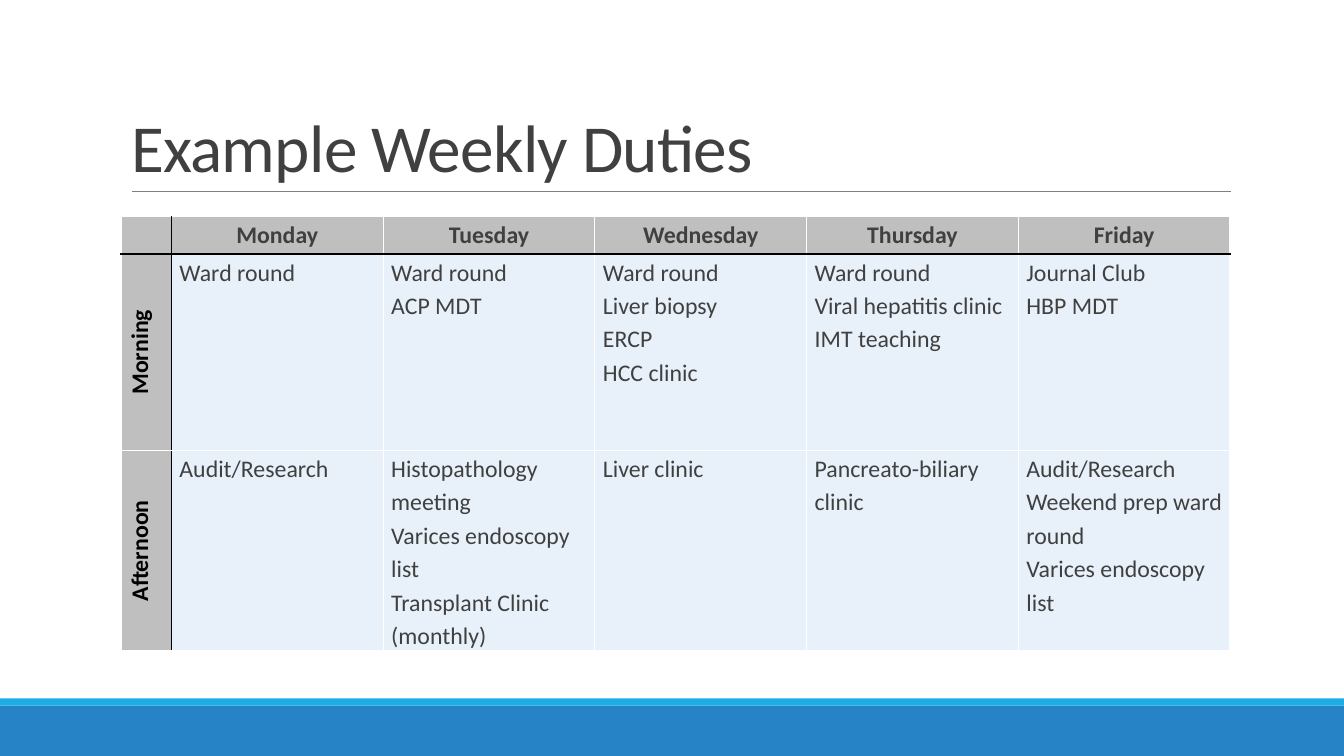
from lxml.etree import SubElement
from pptx import Presentation
from pptx.dml.color import RGBColor
from pptx.enum.shapes import MSO_CONNECTOR, MSO_SHAPE
from pptx.enum.text import MSO_ANCHOR, MSO_AUTO_SIZE, PP_ALIGN
from pptx.oxml.ns import qn
from pptx.util import Inches, Pt

SLIDE_WIDTH, SLIDE_HEIGHT = Inches(13.33), Inches(7.5)
MARGIN = Inches(1.2)
CONTENT_WIDTH = Inches(11)
LABEL_WIDTH, DAY_WIDTH = Inches(0.5), Inches(2.1)
HEADER_HEIGHT, SESSION_HEIGHT = Inches(0.37), Inches(1.95)
FOOTER_TOP, STRIPE_HEIGHT = Inches(7), Inches(0.07)

FONT = "Calibri"
BLACK = RGBColor(0x00, 0x00, 0x00)
WHITE = RGBColor(0xFF, 0xFF, 0xFF)
DARK_GREY = RGBColor(0x40, 0x40, 0x40)
RULE_GREY = RGBColor(0x80, 0x80, 0x80)
HEADER_GREY = RGBColor(0xBF, 0xBF, 0xBF)
PALE_BLUE = RGBColor(0xE8, 0xF1, 0xFA)
FOOTER_BLUE = RGBColor(0x26, 0x83, 0xC6)
STRIPE_BLUE = RGBColor(0x1C, 0xAD, 0xE4)

DAYS = ["Monday", "Tuesday", "Wednesday", "Thursday", "Friday"]
DUTIES = {
    "Morning": [
        ["Ward round"],
        ["Ward round", "ACP MDT"],
        ["Ward round", "Liver biopsy", "ERCP", "HCC clinic"],
        ["Ward round", "Viral hepatitis clinic", "IMT teaching"],
        ["Journal Club", "HBP MDT"],
    ],
    "Afternoon": [
        ["Audit/Research"],
        ["Histopathology meeting", "Varices endoscopy list",
         "Transplant Clinic (monthly)"],
        ["Liver clinic"],
        ["Pancreato-biliary clinic"],
        ["Audit/Research", "Weekend prep ward round",
         "Varices endoscopy list"],
    ],
}


def add_band(slide, top, height, color):
    band = slide.shapes.add_shape(MSO_SHAPE.RECTANGLE, 0, top, SLIDE_WIDTH, height)
    band.shadow.inherit = False
    band.fill.solid()
    band.fill.fore_color.rgb = color
    band.line.fill.background()


def add_title_rule(slide):
    top = Inches(1.9)
    rule = slide.shapes.add_connector(
        MSO_CONNECTOR.STRAIGHT, Inches(1.31), top, Inches(12.21), top)
    rule.line.color.rgb = RULE_GREY
    rule.line.width = Pt(0.5)
    SubElement(rule._element.spPr, qn("a:effectLst"))


def set_title(slide, text):
    title = slide.shapes.title
    title.left, title.top = MARGIN, Inches(0.31)
    title.width, title.height = CONTENT_WIDTH, Inches(1.59)
    frame = title.text_frame
    frame.text = text
    frame.word_wrap = True
    frame.auto_size = MSO_AUTO_SIZE.NONE
    frame.vertical_anchor = MSO_ANCHOR.BOTTOM
    para = frame.paragraphs[0]
    para.alignment = PP_ALIGN.LEFT
    para.line_spacing = 0.85
    para.font.name, para.font.size = FONT, Pt(48)
    para.font.color.rgb = DARK_GREY
    para.runs[0]._r.get_or_add_rPr().set("spc", "-50")


def set_borders(cell, row, column):
    """Black lines set off the header row and label column; the rest are white."""
    is_black = {"lnL": column == 1, "lnR": column == 0,
                "lnT": row == 1, "lnB": row == 0}
    properties = cell._tc.get_or_add_tcPr()
    for side, black in is_black.items():
        line = SubElement(properties, qn(f"a:{side}"), w=str(Pt(1)))
        fill = SubElement(line, qn("a:solidFill"))
        SubElement(fill, qn("a:srgbClr"), val=str(BLACK if black else WHITE))


def fill_cell(cell, row, column, lines):
    is_heading = row == 0 or column == 0
    set_borders(cell, row, column)
    cell.fill.solid()
    cell.fill.fore_color.rgb = HEADER_GREY if is_heading else PALE_BLUE
    cell.margin_left = cell.margin_right = Inches(0.08)
    cell.margin_top = cell.margin_bottom = 0
    if column == 0 and row > 0:
        cell._tc.get_or_add_tcPr().set("vert", "vert270")
    cell.text = "\n".join(lines)
    for para in cell.text_frame.paragraphs:
        para.alignment = PP_ALIGN.CENTER if is_heading else PP_ALIGN.LEFT
        para.line_spacing = 1.15
        para.font.name, para.font.size = FONT, Pt(17)
        para.font.bold = is_heading
        para.font.color.rgb = BLACK if column == 0 else DARK_GREY


def add_timetable(slide):
    rows = [[[""]] + [[day] for day in DAYS]]
    rows += [[[session], *duties] for session, duties in DUTIES.items()]
    height = HEADER_HEIGHT + len(DUTIES) * SESSION_HEIGHT
    table = slide.shapes.add_table(
        len(rows), len(rows[0]), MARGIN, Inches(2.15), CONTENT_WIDTH, height).table
    for index, column in enumerate(table.columns):
        column.width = DAY_WIDTH if index else LABEL_WIDTH
    for index, row in enumerate(table.rows):
        row.height = SESSION_HEIGHT if index else HEADER_HEIGHT
    for row, entries in enumerate(rows):
        for column, lines in enumerate(entries):
            fill_cell(table.cell(row, column), row, column, lines)


def main():
    deck = Presentation()
    deck.slide_width, deck.slide_height = SLIDE_WIDTH, SLIDE_HEIGHT
    slide = deck.slides.add_slide(deck.slide_layouts.get_by_name("Title Only"))
    add_band(slide, FOOTER_TOP, SLIDE_HEIGHT - FOOTER_TOP, FOOTER_BLUE)
    add_band(slide, FOOTER_TOP - STRIPE_HEIGHT, STRIPE_HEIGHT, STRIPE_BLUE)
    add_title_rule(slide)
    set_title(slide, "Example Weekly Duties")
    add_timetable(slide)
    deck.save("out.pptx")


if __name__ == "__main__":
    main()
